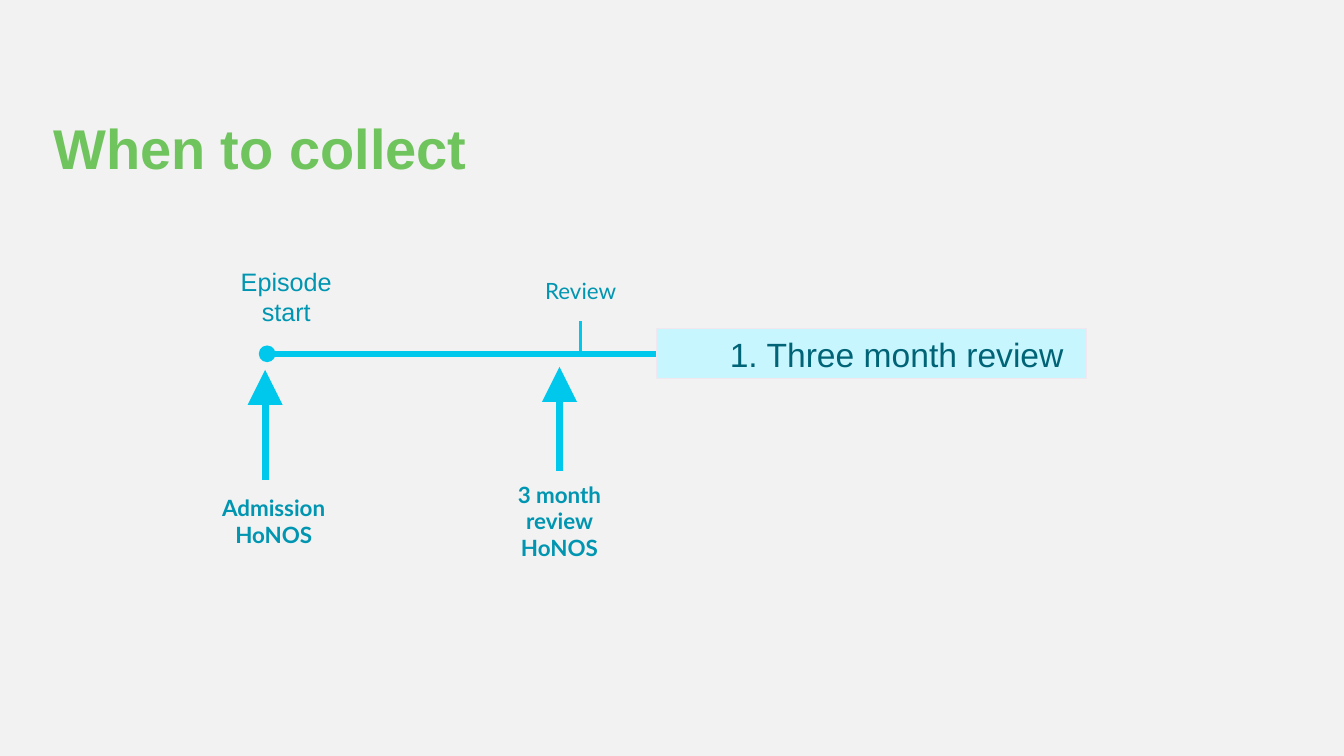
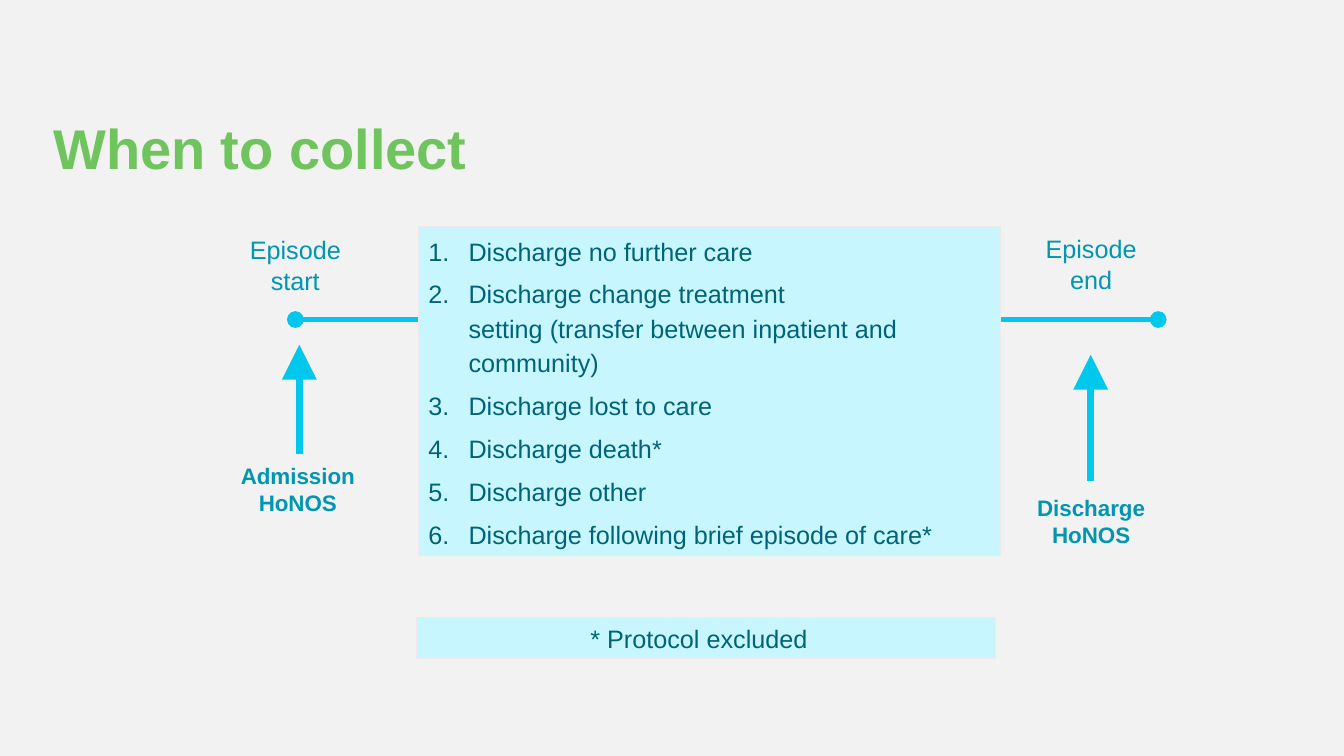
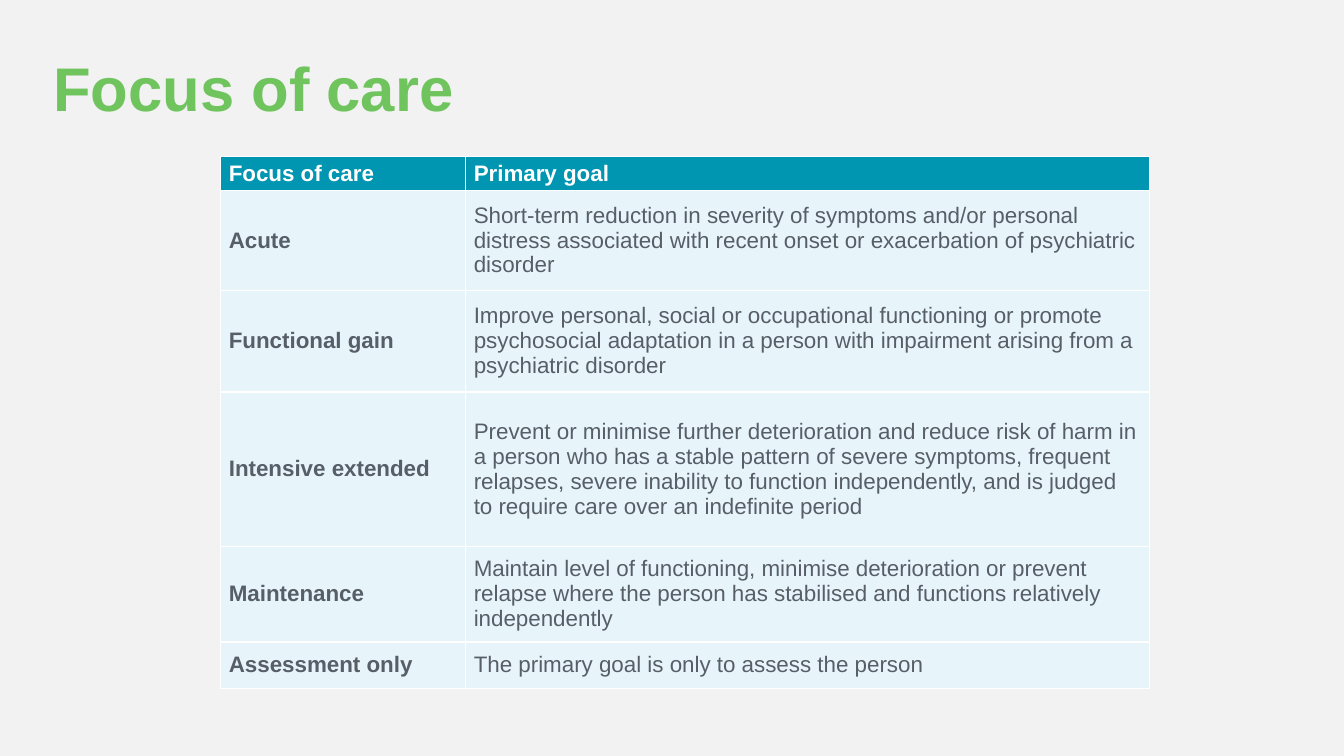
from lxml.etree import SubElement
from pptx import Presentation
from pptx.dml.color import RGBColor
from pptx.enum.shapes import MSO_CONNECTOR, MSO_SHAPE
from pptx.enum.text import MSO_ANCHOR, PP_ALIGN
from pptx.oxml.ns import qn
from pptx.util import Inches, Pt

COLORS = {
    "back": "F2F2F2",
    "title": "70C45D",
    "line": "00C7EC",
    "label": "0095B1",
    "panel": "C8F6FF",
    "edge": "F0E8EE",
    "text": "006476",
    "cell": "E7F5FB",
    "body": "585E68",
    "white": "FFFFFF",
}
FONT = "Arial"
COLS, ROWS = 133.33, 75
REASONS = [
    "Discharge no further care",
    "Discharge change treatment\vsetting (transfer between inpatient and community)",
    "Discharge lost to care",
    "Discharge death*",
    "Discharge other",
    "Discharge following brief episode of care*",
]
GOALS = [
    ("Focus of care", "Primary goal"),
    ("Acute", "Short-term reduction in severity of symptoms and/or personal distress "
     "associated with recent onset or exacerbation of psychiatric disorder"),
    ("Functional gain", "Improve personal, social or occupational functioning or promote "
     "psychosocial adaptation in a person with impairment arising from a psychiatric disorder"),
    ("Intensive extended", "Prevent or minimise further deterioration and reduce risk of harm "
     "in a person who has a stable pattern of severe symptoms, frequent relapses, severe "
     "inability to function independently, and is judged to require care over an indefinite period"),
    ("Maintenance", "Maintain level of functioning, minimise deterioration or prevent relapse "
     "where the person has stabilised and functions relatively independently"),
    ("Assessment only", "The primary goal is only to assess the person"),
]


def grid(*cells):
    return [Inches(cell / 10) for cell in cells]


def color(name):
    return RGBColor.from_string(COLORS[name])


def paint(item, name):
    item.fill.solid()
    item.fill.fore_color.rgb = color(name)


def style(para, size, name, bold=False, face=FONT):
    font = para.font
    font.name, font.size, font.bold = face, Pt(size), bold
    font.color.rgb = color(name)


def write(slide, box, text, size, name="label", bold=False, face=FONT):
    frame = slide.shapes.add_textbox(*grid(*box)).text_frame
    frame.word_wrap = True
    frame.text = text
    para = frame.paragraphs[0]
    style(para, size, name, bold, face)
    return frame, para


def label(slide, box, text, size=18, bold=False, face=FONT):
    para = write(slide, box, text, size, "label", bold, face)[1]
    para.alignment = PP_ALIGN.CENTER


def title(slide, text, size=40, height=14.5):
    frame, para = write(slide, (4.3, 4, 115, height), text, size, "title", True)
    frame.vertical_anchor = MSO_ANCHOR.BOTTOM
    para.line_spacing = 0.9


def line(slide, start, end, width, **ends):
    link = slide.shapes.add_connector(MSO_CONNECTOR.STRAIGHT, *grid(*start, *end))
    link.line.color.rgb = color("line")
    link.line.width = Pt(width)
    props = link._element.spPr
    stroke = props.find(qn("a:ln"))
    for tag, (kind, size) in ends.items():
        SubElement(stroke, qn(f"a:{tag}"), type=kind, w=size, len=size)
    SubElement(props, qn("a:effectLst"))


def track(slide, left, right, row):
    dot = ("oval", "med")
    line(slide, (left, row), (right, row), 4, headEnd=dot, tailEnd=dot)


def arrow(slide, col, low, high):
    line(slide, (col, low), (col, high), 5, tailEnd=("triangle", "lg"))


def panel(slide, box, lines, size, anchor=MSO_ANCHOR.MIDDLE):
    shape = slide.shapes.add_shape(MSO_SHAPE.RECTANGLE, *grid(*box))
    shape.shadow.inherit = False
    paint(shape, "panel")
    shape.line.color.rgb = color("edge")
    shape.line.width = Pt(0.75)
    frame = shape.text_frame
    frame.word_wrap = True
    frame.vertical_anchor = anchor
    frame.text = "\n".join(lines)
    for para in frame.paragraphs:
        para.alignment = PP_ALIGN.CENTER
        style(para, size, "text")
    return frame


def number(frame):
    for para in frame.paragraphs:
        para.alignment = PP_ALIGN.LEFT
        para.line_spacing = 1.14
        para.space_after = Pt(6)
        props = para._p.get_or_add_pPr()
        props.set("marL", str(Inches(0.4)))
        props.set("indent", str(-Inches(0.4)))
        mark = props.makeelement(qn("a:buAutoNum"), {"type": "arabicPeriod"})
        props.find(qn("a:defRPr")).addprevious(mark)


def border(cell):
    props = cell._tc.get_or_add_tcPr()
    for side in ("lnL", "lnR", "lnT", "lnB"):
        edge = SubElement(props, qn(f"a:{side}"), w=str(Pt(1)))
        fill = SubElement(edge, qn("a:solidFill"))
        SubElement(fill, qn("a:srgbClr"), val=COLORS["white"])


def table(slide, left, top, widths, heights, data):
    box = grid(left, top, sum(widths), sum(heights))
    chart = slide.shapes.add_table(len(heights), len(widths), *box).table
    for col, width in zip(chart.columns, grid(*widths)):
        col.width = width
    for row, height in zip(chart.rows, grid(*heights)):
        row.height = height
    for r, texts in enumerate(data):
        for c, text in enumerate(texts):
            cell = chart.cell(r, c)
            border(cell)
            paint(cell, "cell" if r else "label")
            cell.margin_left = cell.margin_right = Inches(0.08)
            cell.margin_top = cell.margin_bottom = 0
            cell.vertical_anchor = MSO_ANCHOR.MIDDLE
            cell.text = text
            style(cell.text_frame.paragraphs[0], 16, "body" if r else "white", r == 0 or c == 0)


def page(deck):
    slide = deck.slides.add_slide(deck.slide_layouts[6])
    paint(slide.background, "back")
    return slide


def review(slide):
    title(slide, "When to collect")
    track(slide, 26.5, 103.7, 35.1)
    label(slide, (20.9, 25.9, 15, 7), "Episode start")
    label(slide, (52.2, 27, 10.8, 3.7), "Review", 16, face="Lato")
    line(slide, (57.6, 34.9), (57.6, 31.8), 2.25)
    label(slide, (48, 47.2, 15, 9.1), "3 month review HoNOS", 16, True, "Lato")
    arrow(slide, 55.5, 46.7, 36.4)
    arrow(slide, 26.3, 47.6, 36.7)
    label(slide, (20.9, 48.5, 12.5, 6.4), "Admission HoNOS", 16, True, "Lato")
    frame = panel(slide, (65.1, 32.6, 42.7, 5), ["1. Three month review"], 24)
    frame.margin_left = Inches(0.6)


def leave(slide):
    title(slide, "When to collect")
    track(slide, 29.3, 114.9, 31.7)
    label(slide, (21.8, 22.8, 15, 7), "Episode start")
    arrow(slide, 29.7, 45, 34.2)
    label(slide, (22.8, 45.4, 13.5, 6.4), "Admission HoNOS", 16, True)
    label(slide, (101.6, 22.7, 13.3, 7), "Episode end")
    number(panel(slide, (41.5, 22.5, 57.8, 32.6), REASONS, 18, MSO_ANCHOR.TOP))
    arrow(slide, 108.2, 47.7, 35.2)
    label(slide, (101.6, 48.5, 13.3, 6.4), "Discharge HoNOS", 16, True)
    frame = panel(slide, (41.3, 61.3, 57.5, 4), ["* Protocol excluded"], 18)
    frame.margin_right = Inches(0.24)


def focus(slide):
    title(slide, "Focus of care", 44, 8.9)
    table(slide, 21.9, 15.5, [24.3, 67.8], [3.4, 9.9, 10.1, 15.3, 9.5, 4.6], GOALS)


def main():
    deck = Presentation()
    deck.slide_width, deck.slide_height = grid(COLS, ROWS)
    for build in (review, leave, focus):
        build(page(deck))
    deck.save("out.pptx")


if __name__ == "__main__":
    main()
